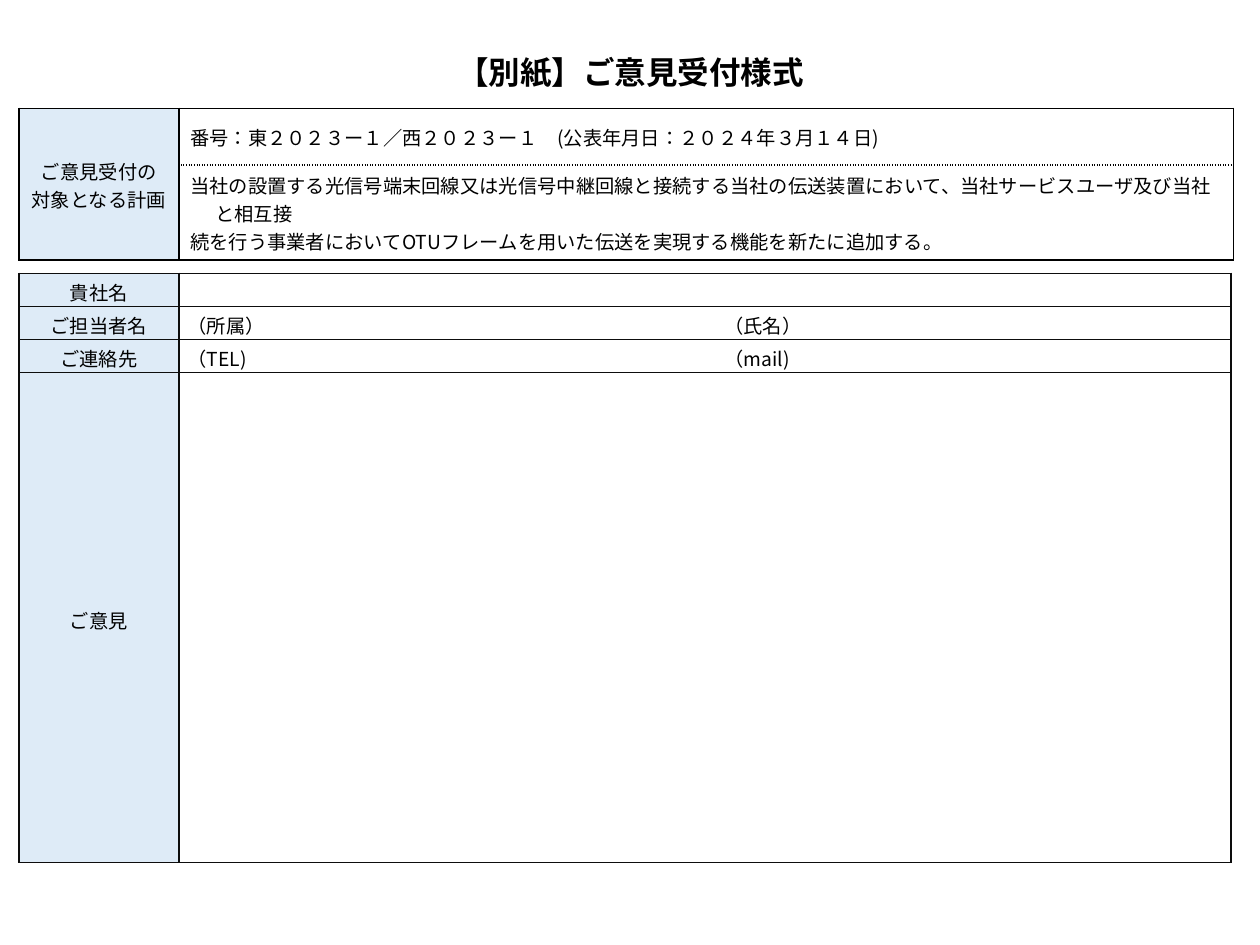
from dataclasses import dataclass

from lxml.etree import SubElement
from pptx import Presentation
from pptx.dml.color import RGBColor
from pptx.enum.lang import MSO_LANGUAGE_ID
from pptx.enum.text import MSO_ANCHOR, MSO_AUTO_SIZE, PP_ALIGN
from pptx.oxml.ns import qn
from pptx.util import Inches, Pt

FACE = "Noto Sans CJK JP"
HEAD = "DEEBF7"
INK = "000000"
SIDES = {"l": "lnL", "r": "lnR", "t": "lnT", "b": "lnB"}


@dataclass
class Entry:
    row: int
    col: int
    lines: tuple = ()
    head: bool = False
    span: tuple = (1, 1)
    sides: str = "lrtb"
    dots: str = ""
    hang: float = 0


@dataclass
class Grid:
    left: float
    top: float
    cols: tuple
    rows: tuple
    line: str
    pads: dict
    cells: list


def color(code):
    return RGBColor.from_string(code)


def style(run, size, bold=False):
    look = {"name": FACE, "size": Pt(size), "bold": bold,
            "language_id": MSO_LANGUAGE_ID.JAPANESE}
    for key, value in look.items():
        setattr(run.font, key, value)
    run.font.color.rgb = color(INK)
    SubElement(run.font._element, qn("a:ea"), typeface=FACE)


def write(frame, lines, size, align, bold=False, hang=0):
    for i, line in enumerate(lines):
        para = frame.add_paragraph() if i else frame.paragraphs[0]
        para.alignment = align
        if hang:
            props = para._p.get_or_add_pPr()
            props.set("marL", str(Inches(hang)))
            props.set("indent", str(-Inches(hang)))
        run = para.add_run()
        run.text = line
        style(run, size, bold)


def border(cell, entry, code):
    """Draw the listed sides; the other sides get no line."""
    props = cell._tc.get_or_add_tcPr()
    for i, (side, tag) in enumerate(SIDES.items()):
        line = SubElement(props, qn(f"a:{tag}"), w=str(Pt(1)))
        if side in entry.sides:
            fill = SubElement(line, qn("a:solidFill"))
            SubElement(fill, qn("a:srgbClr"), val=code)
            dash = "sysDot" if side in entry.dots else "solid"
            SubElement(line, qn("a:prstDash"), val=dash)
        else:
            SubElement(line, qn("a:noFill"))
        props.insert(i, line)


def fill_cell(table, entry, grid):
    cell = table.cell(entry.row, entry.col)
    down, over = entry.span
    if entry.span != (1, 1):
        cell.merge(table.cell(entry.row + down - 1, entry.col + over - 1))
    for r in range(down):
        for c in range(over):
            part = table.cell(entry.row + r, entry.col + c)
            if entry.head:
                part.fill.solid()
                part.fill.fore_color.rgb = color(HEAD)
            else:
                part.fill.background()
            border(part, entry, grid.line)
            for key, value in grid.pads.items():
                setattr(part, f"margin_{key}", Inches(value))
            # Empty cells need a small size too, or their rows grow
            end = part.text_frame.paragraphs[0]._p.get_or_add_endParaRPr()
            end.set("sz", "1100")
    cell.vertical_anchor = MSO_ANCHOR.MIDDLE
    align = PP_ALIGN.CENTER if entry.head else PP_ALIGN.LEFT
    write(cell.text_frame, entry.lines, 11, align, hang=entry.hang)


def draw(slide, grid: Grid):
    table = slide.shapes.add_table(
        len(grid.rows), len(grid.cols), Inches(grid.left), Inches(grid.top),
        Inches(sum(grid.cols)), Inches(sum(grid.rows))).table
    table.first_row = table.horz_banding = False
    for col, width in zip(table.columns, grid.cols):
        col.width = Inches(width)
    for row, height in zip(table.rows, grid.rows):
        row.height = Inches(height)
    for entry in grid.cells:
        fill_cell(table, entry, grid)


def add_title(slide, text):
    title = slide.shapes.title
    place = {"left": 0.85, "top": 0.35, "width": 8.31, "height": 0.44}
    for key, value in place.items():
        setattr(title, key, Inches(value))
    frame = title.text_frame
    frame.auto_size = MSO_AUTO_SIZE.NONE
    frame.vertical_anchor = MSO_ANCHOR.MIDDLE
    write(frame, [text], 18, PP_ALIGN.CENTER, bold=True)


PLAN = Grid(
    0.15, 0.86, (1.27, 8.37), (0.45, 0.75), INK,
    {"left": 0.09, "right": 0.09, "top": 0.05, "bottom": 0.04},
    [
        Entry(0, 0, ("ご意見受付の", "対象となる計画"), head=True, span=(2, 1)),
        Entry(0, 1, ("番号：東２０２３ー１／西２０２３ー１　(公表年月日：２０２４年３月１４日)",),
              dots="b"),
        Entry(1, 1, (
            "当社の設置する光信号端末回線又は光信号中継回線と接続する当社の伝送装置において、"
            "当社サービスユーザ及び当社と相互接",
            "続を行う事業者においてOTUフレームを用いた伝送を実現する機能を新たに追加する。"),
            dots="t", hang=0.2),
    ])

LABELS = ("貴社名", "ご担当者名", "ご連絡先", "ご意見")
PAIRS = ((("（所属）",), ("（氏名）",)), (("（TEL)",), ("（mail)",)), ((), ()))

FORM = Grid(
    0.15, 2.17, (1.27, 4.26, 4.09), (0.26, 0.26, 0.26, 3.89), "0D0D0D",
    {"left": 0.07, "right": 0.07, "top": 0.04, "bottom": 0},
    [Entry(r, 0, (label,), head=True) for r, label in enumerate(LABELS)]
    + [Entry(0, 1, span=(1, 2))]
    + [Entry(r, c, lines, sides=sides)
       for r, pair in enumerate(PAIRS, 1)
       for c, lines, sides in zip((1, 2), pair, ("ltb", "rtb"))])


def main():
    deck = Presentation()
    deck.slide_width, deck.slide_height = Inches(10), Inches(7.5)
    slide = deck.slides.add_slide(deck.slide_layouts[5])
    add_title(slide, "【別紙】ご意見受付様式")
    for grid in (FORM, PLAN):
        draw(slide, grid)
    deck.save("out.pptx")


if __name__ == "__main__":
    main()
